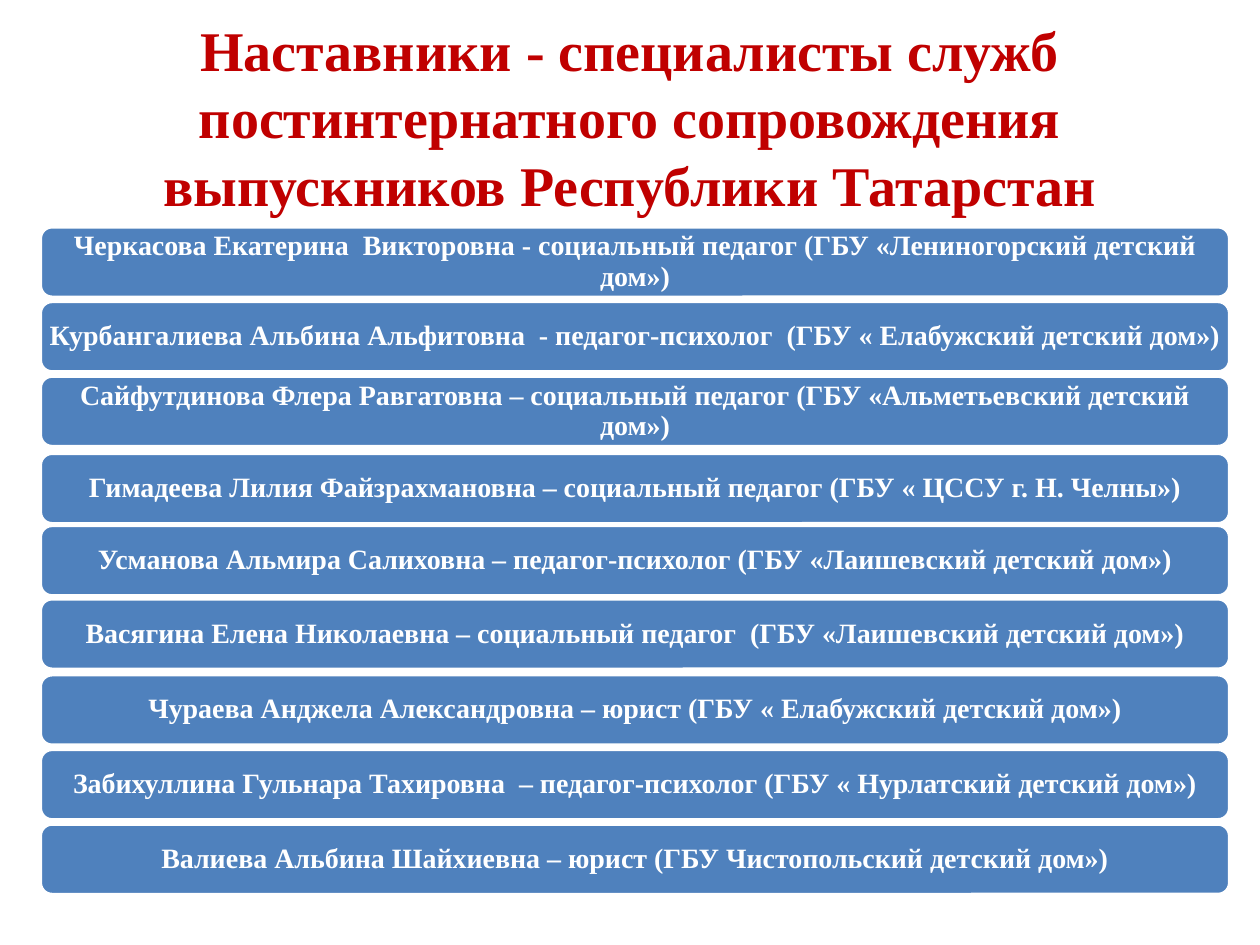
from pptx import Presentation
from pptx import util as u
from pptx.dml.color import RGBColor
from pptx.enum import shapes, text

FONT = "Times New Roman"
COLORS = {"title": "C00000", "bar": "4F81BD", "white": "FFFFFF"}
TITLE = ("Наставники - специалисты служб постинтернатного сопровождения "
         "выпускников Республики Татарстан")
MENTORS = [
    "Черкасова Екатерина  Викторовна - социальный педагог (ГБУ «Лениногорский детский дом»)",
    "Курбангалиева Альбина Альфитовна  - педагог-психолог  (ГБУ « Елабужский детский дом»)",
    "Сайфутдинова Флера Равгатовна – социальный педагог (ГБУ «Альметьевский детский дом»)",
    "Гимадеева Лилия Файзрахмановна – социальный педагог (ГБУ « ЦССУ г. Н. Челны»)",
    "Усманова Альмира Салиховна – педагог-психолог (ГБУ «Лаишевский детский дом»)",
    "Васягина Елена Николаевна – социальный педагог  (ГБУ «Лаишевский детский дом»)",
    "Чураева Анджела Александровна – юрист (ГБУ « Елабужский детский дом»)",
    "Забихуллина Гульнара Тахировна  – педагог-психолог (ГБУ « Нурлатский детский дом»)",
    "Валиева Альбина Шайхиевна – юрист (ГБУ Чистопольский детский дом»)",
]
BAR_HEIGHT = 0.56
NUDGES = {3: 0.02, 5: -0.01}  # bars set slightly off the even spacing


def color(name):
    return RGBColor.from_string(COLORS[name])


def write(shape, words, size, color_name):
    """Put one centred bold paragraph into the shape and return it."""
    frame = shape.text_frame
    frame.word_wrap = True
    frame.vertical_anchor = text.MSO_ANCHOR.MIDDLE
    para = frame.paragraphs[0]
    para.alignment = text.PP_ALIGN.CENTER
    span = para.add_run()
    span.text = words
    span.font.name = FONT
    span.font.size = u.Pt(size)
    span.font.bold = True
    span.font.color.rgb = color(color_name)
    return para


def add_title(page, left, top, width, height):
    box = page.shapes.add_textbox(*map(u.Inches, (left, top, width, height)))
    write(box, TITLE, 32, "title")


def add_bar(page, words, left, top, width, height):
    bar = page.shapes.add_shape(shapes.MSO_SHAPE.ROUNDED_RECTANGLE,
                                *map(u.Inches, (left, top, width, height)))
    bar.shadow.inherit = False
    bar.fill.solid()
    bar.fill.fore_color.rgb = color("bar")
    bar.line.color.rgb = color("white")
    bar.line.width = u.Pt(2)
    frame = bar.text_frame
    frame.margin_left = frame.margin_right = u.Inches(0.04)
    frame.margin_top = frame.margin_bottom = 0
    write(bar, words, 16, "white").line_spacing = 0.9


def add_mentor_list(page, left, top, width, height):
    """Spread the bars evenly from the top to the bottom of the box."""
    pitch = (height - BAR_HEIGHT) / (len(MENTORS) - 1)
    for index, words in enumerate(MENTORS):
        bar_top = top + index * pitch + NUDGES.get(index, 0)
        add_bar(page, words, left, bar_top, width, BAR_HEIGHT)


def main():
    deck = Presentation()
    deck.slide_width, deck.slide_height = u.Inches(10), u.Inches(7.5)
    page = deck.slides.add_slide(deck.slide_layouts[6])
    add_title(page, 0.5, 0.3, 9, 1.25)
    add_mentor_list(page, 0.32, 1.8, 9.44, 5.3)
    deck.save("out.pptx")


if __name__ == "__main__":
    main()
